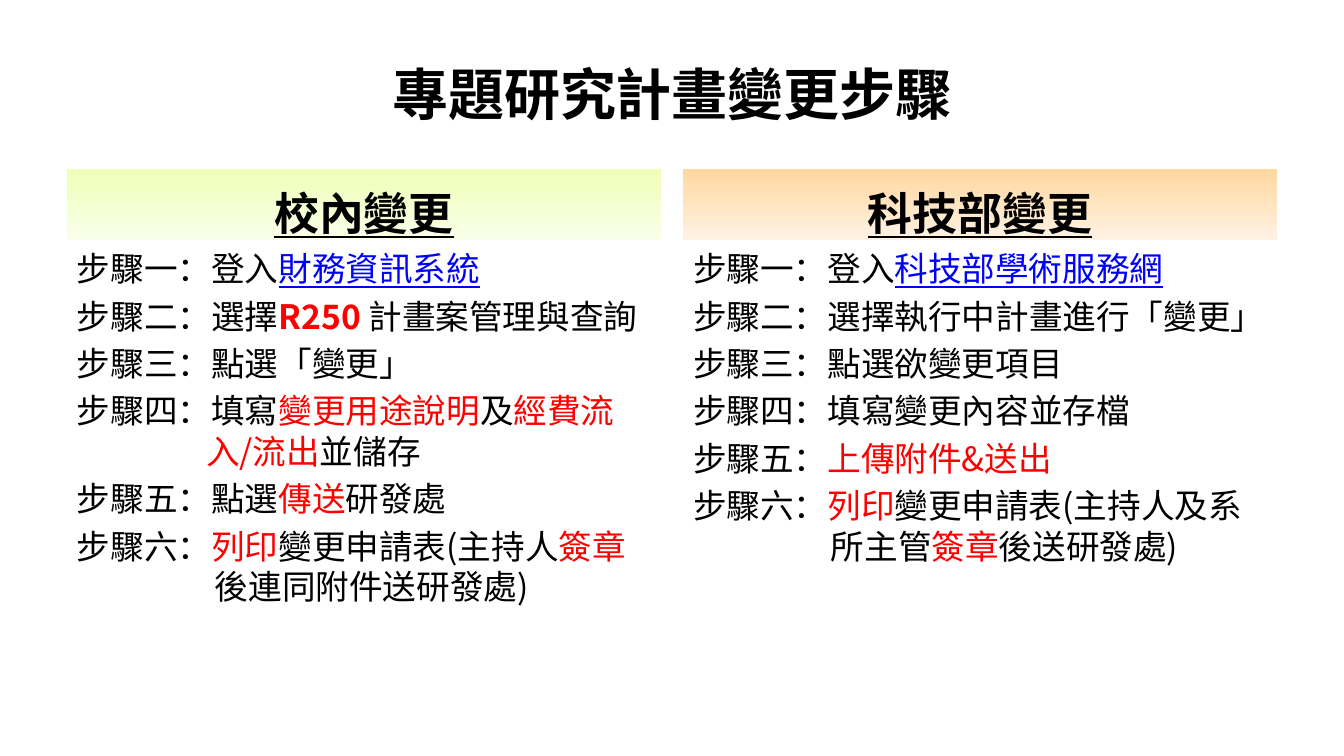
"""Build the slide comparing campus and ministry project change steps."""
from dataclasses import dataclass

from lxml import etree
from pptx import Presentation
from pptx import util as u
from pptx.dml.color import RGBColor
from pptx.enum import text
from pptx.oxml.ns import qn

COMPARISON_LAYOUT = 4


@dataclass(frozen=True)
class Theme:
    """Fonts, type sizes in points and colours of the slide."""

    title_font: str = "Quicksand"
    font: str = "Noto Sans CJK SC"
    title_size: int = 40
    heading_size: int = 32
    step_size: int = 24
    step_line: int = 29
    step_gap: float = 4.8
    ink: str = "000000"
    red: str = "FF0000"
    blue: str = "0000FF"
    green_band: tuple = ("EFFFB8", "F9FFE9")
    orange_band: tuple = ("FFD8A0", "FFF2E3")


THEME = Theme()
STYLES = {
    "plain": {"colour": THEME.ink},
    "red": {"colour": THEME.red},
    "code": {"colour": THEME.red, "bold": True},
    "link": {"colour": THEME.blue, "underline": True},
}

CAMPUS_STEPS = [
    (0, ["步驟一：登入", ("財務資訊系統", "link")]),
    (0, ["步驟二：選擇", ("R250 ", "code"), "計畫案管理與查詢"]),
    (0, ["步驟三：點選「變更」"]),
    (129, ["步驟四：填寫", ("變更用途說明", "red"), "及", ("經費流入/流出", "red"), "並儲存"]),
    (0, ["步驟五：點選", ("傳送", "red"), "研發處"]),
    (138, ["步驟六：", ("列印", "red"), "變更申請表(主持人", ("簽章", "red"), "後連同附件送研發處)"]),
]
MINISTRY_STEPS = [
    (0, ["步驟一：登入", ("科技部學術服務網", "link")]),
    (0, ["步驟二：選擇執行中計畫進行「變更」"]),
    (0, ["步驟三：點選欲變更項目"]),
    (0, ["步驟四：填寫變更內容並存檔"]),
    (0, ["步驟五：", ("上傳附件&送出", "red")]),
    (138, ["步驟六：", ("列印", "red"), "變更申請表(主持人及系所主管", ("簽章", "red"), "後送研發處)"]),
]


def px(count):
    """Turn pixels into EMU."""
    return u.Emu(round(count * 914400 / 100.8))


def place(box, left, top, width, height, anchor):
    """Move a placeholder and fix its text frame."""
    box.left, box.top, box.width, box.height = map(px, (left, top, width, height))
    frame = box.text_frame
    frame.word_wrap = True
    frame.auto_size = text.MSO_AUTO_SIZE.NONE
    frame.vertical_anchor = anchor
    frame.margin_left = frame.margin_right = px(10)
    frame.margin_top = frame.margin_bottom = px(5)
    return frame


def format_span(span, size, colour, bold=False, underline=False, font=THEME.font):
    """Set the type of one run, for Latin and East Asian text."""
    span.font.name = font
    span.font.size = u.Pt(size)
    span.font.bold = bold
    span.font.underline = underline
    span.font.color.rgb = RGBColor.from_string(colour)
    east_asian = etree.Element(qn("a:ea"), typeface=THEME.font)
    span.font._element.find(qn("a:latin")).addnext(east_asian)


def set_indent(para, hanging):
    """Remove the bullet and set a hanging indent in pixels."""
    properties = para._p.get_or_add_pPr()
    properties.set("marL", str(px(hanging)))
    properties.set("indent", str(-px(hanging)))
    etree.SubElement(properties, qn("a:buNone"))


def write_line(frame, words, **style):
    """Write one centred line into a frame."""
    frame.text = words
    para = frame.paragraphs[0]
    set_indent(para, 0)
    para.alignment = text.PP_ALIGN.CENTER
    para.space_before = u.Pt(0)
    format_span(para.runs[0], **style)


def write_heading(box, left, words, band):
    """Write a column heading on a vertical gradient band."""
    frame = place(box, left, 169, 594, 71, text.MSO_ANCHOR.BOTTOM)
    frame.margin_bottom = px(1)
    box.fill.gradient()
    box.fill.gradient_angle = 270
    for stop, colour, position in zip(box.fill.gradient_stops, band, (0, 1)):
        stop.color.rgb = RGBColor.from_string(colour)
        stop.position = position
    write_line(frame, words, size=THEME.heading_size, colour=THEME.ink,
               bold=True, underline=True)


def write_steps(box, left, steps):
    """Write the steps of one column."""
    frame = place(box, left, 240, 594, 435, text.MSO_ANCHOR.TOP)
    frame.margin_top = px(8)
    for index, (hanging, parts) in enumerate(steps):
        para = frame.add_paragraph() if index else frame.paragraphs[0]
        set_indent(para, hanging)
        para.alignment = text.PP_ALIGN.LEFT
        para.line_spacing = u.Pt(THEME.step_line)
        para.space_before = u.Pt(THEME.step_gap if index else 0)
        for part in parts:
            words, style = (part, "plain") if isinstance(part, str) else part
            span = para.add_run()
            span.text = words
            format_span(span, THEME.step_size, **STYLES[style])


def main():
    """Build and save the deck."""
    deck = Presentation()
    deck.slide_width, deck.slide_height = px(1344), px(756)
    page = deck.slides.add_slide(deck.slide_layouts[COMPARISON_LAYOUT])
    title, *boxes = page.placeholders
    frame = place(title, 67, 30, 1210, 126, text.MSO_ANCHOR.MIDDLE)
    write_line(frame, "專題研究計畫變更步驟", size=THEME.title_size,
               colour=THEME.ink, bold=True, font=THEME.title_font)
    columns = [
        (67, "校內變更", THEME.green_band, CAMPUS_STEPS),
        (683, "科技部變更", THEME.orange_band, MINISTRY_STEPS),
    ]
    for (left, words, band, steps), heading, body in zip(columns, boxes[::2], boxes[1::2]):
        write_heading(heading, left, words, band)
        write_steps(body, left, steps)
    deck.save("out.pptx")


if __name__ == "__main__":
    main()
